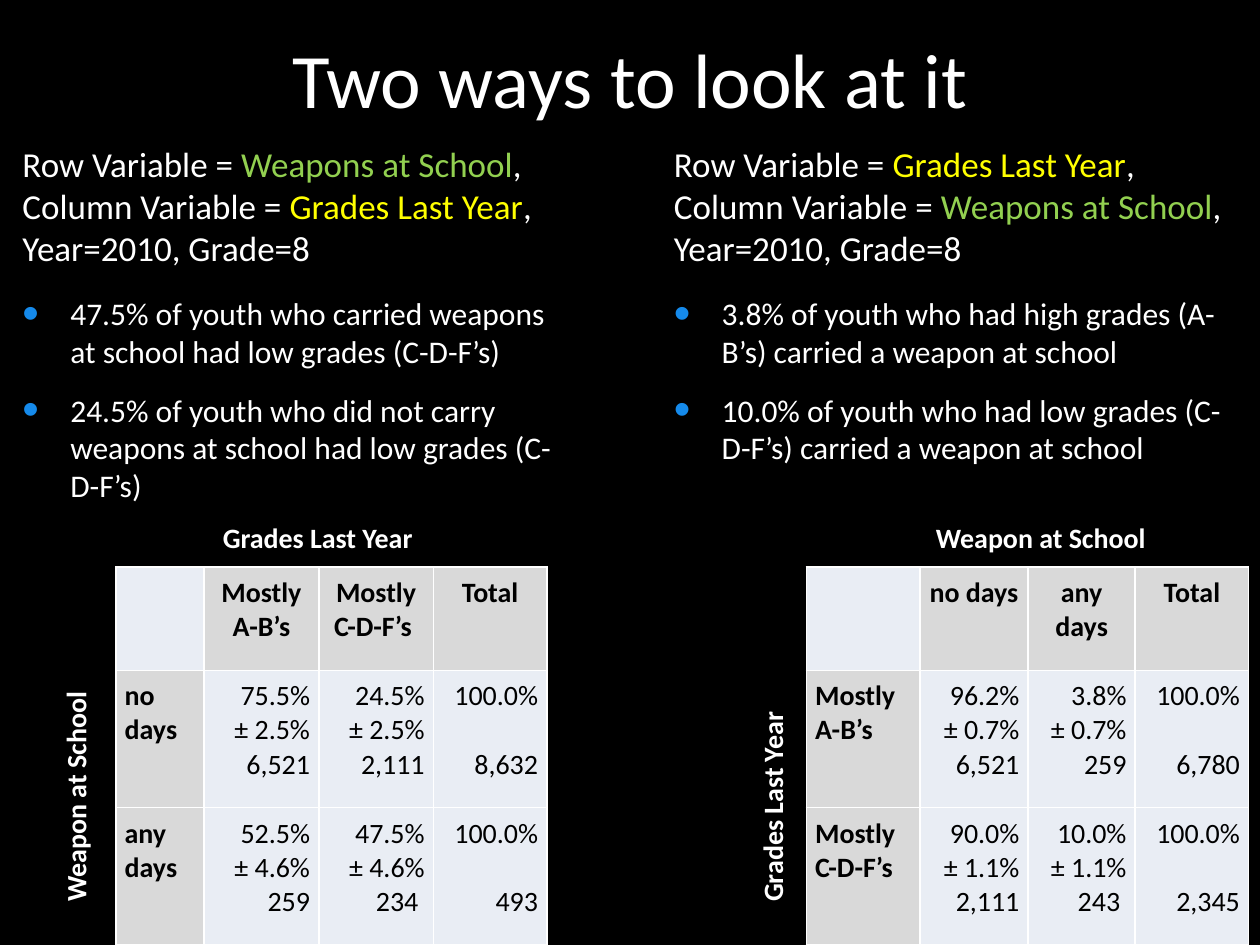
from dataclasses import dataclass

from lxml import etree
from pptx import Presentation
from pptx import util as u
from pptx.dml.color import RGBColor
from pptx.enum import text as t
from pptx.oxml.ns import qn

EMU_PER_PX = 9144


@dataclass(frozen=True)
class Theme:
    font: str = "Calibri"
    ground: str = "000000"
    light: str = "FFFFFF"
    dark: str = "000000"
    weapons: str = "92D050"
    grades: str = "FFFF00"
    bullet: str = "158AEB"
    heading_fill: str = "D9D9D9"
    value_fill: str = "E9EDF4"
    title_size: int = 44
    variable_size: int = 20
    finding_size: int = 18
    table_size: int = 16


@dataclass(frozen=True)
class Box:
    left: int
    top: int
    width: int
    height: int

    def emu(self) -> list:
        return [px(n) for n in (self.left, self.top, self.width, self.height)]


@dataclass(frozen=True)
class Variable:
    name: str
    color: str


@dataclass(frozen=True)
class Label:
    caption: str
    box: Box
    rotation: int = 0


@dataclass(frozen=True)
class View:
    summary_box: Box
    row_variable: Variable
    column_variable: Variable
    findings: tuple
    table_box: Box
    column_widths: tuple
    cells: tuple
    labels: tuple


THEME = Theme()
WEAPONS = Variable("Weapons at School", THEME.weapons)
GRADES = Variable("Grades Last Year", THEME.grades)
ROW_HEIGHTS = (82, 109, 109)

VIEWS = (
    View(
        Box(8, 108, 458, 333), WEAPONS, GRADES,
        ("47.5% of youth who carried weapons at school had low grades (C-D-F’s)",
         "24.5% of youth who did not carry weapons at school had low grades (C-D-F’s)"),
        Box(92, 450, 342, 300), (70, 91, 91, 90),
        (("", "Mostly A-B’s", "Mostly C-D-F’s ", "Total"),
         ("no days", "75.5%\n± 2.5%\n6,521", "24.5%\n± 2.5%\n2,111", "100.0%\n8,632"),
         ("any days", "52.5%\n± 4.6%\n259", "47.5%\n± 4.6%\n234 ", "100.0%\n493")),
        (Label("Grades Last Year", Box(167, 408, 217, 64)),
         Label("Weapon at School", Box(-35, 585, 217, 64), 270)),
    ),
    View(
        Box(525, 108, 467, 269), GRADES, WEAPONS,
        ("3.8% of youth who had high grades (A-B’s) carried a weapon at school",
         "10.0% of youth who had low grades (C-D-F’s) carried a weapon at school"),
        Box(640, 450, 351, 300), (90, 86, 85, 90),
        (("", "no days", "any days", "Total"),
         ("Mostly A-B’s", "96.2%\n± 0.7%\n6,521", "3.8%\n± 0.7%\n259", "100.0%\n6,780"),
         ("Mostly C-D-F’s", "90.0%\n± 1.1%\n2,111", "10.0%\n± 1.1%\n243 ", "100.0%\n2,345")),
        (Label("Weapon at School", Box(733, 408, 217, 64)),
         Label("Grades Last Year", Box(518, 585, 217, 64), 270)),
    ),
)


def px(length: int) -> u.Emu:
    return u.Emu(length * EMU_PER_PX)


def style(run, size: int, color: str, bold: bool = False) -> None:
    run.font.name = THEME.font
    run.font.size = u.Pt(size)
    run.font.bold = bold
    run.font.color.rgb = RGBColor.from_string(color)


def add_bullet(paragraph) -> None:
    properties = paragraph._p.get_or_add_pPr()
    properties.set("marL", str(px(38)))
    properties.set("indent", str(px(-38)))
    color = etree.SubElement(properties, qn("a:buClr"))
    etree.SubElement(color, qn("a:srgbClr"), val=THEME.bullet)
    etree.SubElement(properties, qn("a:buSzPct"), val="150000")
    etree.SubElement(properties, qn("a:buFont"), typeface="Arial")
    etree.SubElement(properties, qn("a:buChar"), char="•")


def add_title(slide, caption: str) -> None:
    title = slide.shapes.title
    title.left, title.top, title.width, title.height = Box(50, 17, 900, 125).emu()
    frame = title.text_frame
    frame.text = caption
    frame.auto_size = t.MSO_AUTO_SIZE.NONE
    frame.vertical_anchor = t.MSO_ANCHOR.TOP
    frame.margin_top = px(8)
    frame.paragraphs[0].alignment = t.PP_ALIGN.CENTER
    style(frame.paragraphs[0].runs[0], THEME.title_size, THEME.light)


def add_summary(slide, view: View) -> None:
    frame = slide.shapes.add_textbox(*view.summary_box.emu()).text_frame
    frame.word_wrap = True
    frame.auto_size = t.MSO_AUTO_SIZE.SHAPE_TO_FIT_TEXT
    roles = (("Row Variable = ", view.row_variable), ("Column Variable = ", view.column_variable))
    frame.text = "\n".join([role for role, _ in roles] + ["Year=2010, Grade=8", *view.findings])
    for paragraph, (_, variable) in zip(frame.paragraphs, roles):
        for part, color in ((variable.name, variable.color), (",", THEME.light)):
            run = paragraph.add_run()
            run.text = part
            style(run, THEME.variable_size, color)
    for paragraph in frame.paragraphs[:3]:
        style(paragraph.runs[0], THEME.variable_size, THEME.light)
    for paragraph, gap in zip(frame.paragraphs[3:], (14.65, 12)):
        paragraph.space_before = u.Pt(gap)
        add_bullet(paragraph)
        style(paragraph.runs[0], THEME.finding_size, THEME.light)


def add_borders(cell) -> None:
    properties = cell._tc.get_or_add_tcPr()
    for position, side in enumerate(("lnL", "lnR", "lnT", "lnB")):
        line = etree.Element(qn(f"a:{side}"), w=str(u.Pt(1)))
        fill = etree.SubElement(line, qn("a:solidFill"))
        etree.SubElement(fill, qn("a:srgbClr"), val=THEME.light)
        properties.insert(position, line)


def fill_cell(cell, content: str, row: int, column: int) -> None:
    heading = (row == 0) != (column == 0)
    cell.fill.solid()
    cell.fill.fore_color.rgb = RGBColor.from_string(
        THEME.heading_fill if heading else THEME.value_fill)
    add_borders(cell)
    cell.margin_left = cell.margin_right = cell.margin_top = cell.margin_bottom = px(7)
    cell.text_frame.text = content
    lines = cell.text_frame.paragraphs
    for line in lines:
        if column:
            line.alignment = t.PP_ALIGN.RIGHT if row else t.PP_ALIGN.CENTER
        for run in line.runs:
            style(run, THEME.table_size, THEME.dark, heading)
    if len(lines) == 2:
        lines[1].space_before = u.Pt(19.5)


def add_crosstab(slide, view: View) -> None:
    table = slide.shapes.add_table(
        len(ROW_HEIGHTS), len(view.column_widths), *view.table_box.emu()).table
    table.first_row = table.horz_banding = False
    for column, width in zip(table.columns, view.column_widths):
        column.width = px(width)
    for r, height in enumerate(ROW_HEIGHTS):
        table.rows[r].height = px(height)
        for c, content in enumerate(view.cells[r]):
            fill_cell(table.cell(r, c), content, r, c)


def add_label(slide, label: Label) -> None:
    caption_box = slide.shapes.add_textbox(*label.box.emu())
    caption_box.rotation = label.rotation
    caption_box.text_frame.word_wrap = True
    caption_box.text_frame.text = label.caption
    style(caption_box.text_frame.paragraphs[0].runs[0], THEME.table_size, THEME.light, True)


def main() -> None:
    deck = Presentation()
    deck.slide_width, deck.slide_height = px(1000), px(750)
    slide = deck.slides.add_slide(deck.slide_layouts[5])
    slide.background.fill.solid()
    slide.background.fill.fore_color.rgb = RGBColor.from_string(THEME.ground)
    add_title(slide, "Two ways to look at it")
    for view in VIEWS:
        add_summary(slide, view)
        add_crosstab(slide, view)
        for label in view.labels:
            add_label(slide, label)
    deck.save("out.pptx")


if __name__ == "__main__":
    main()
